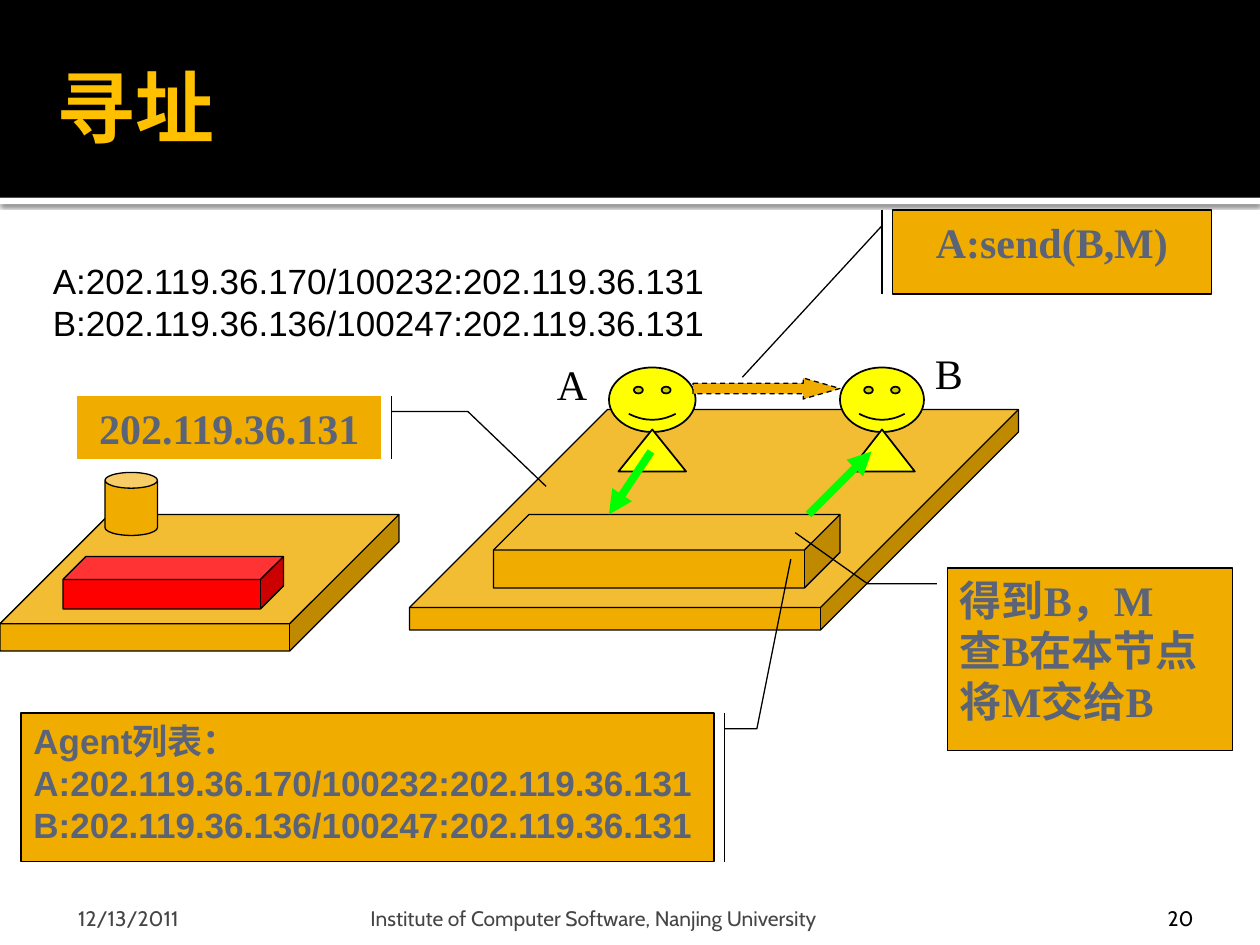
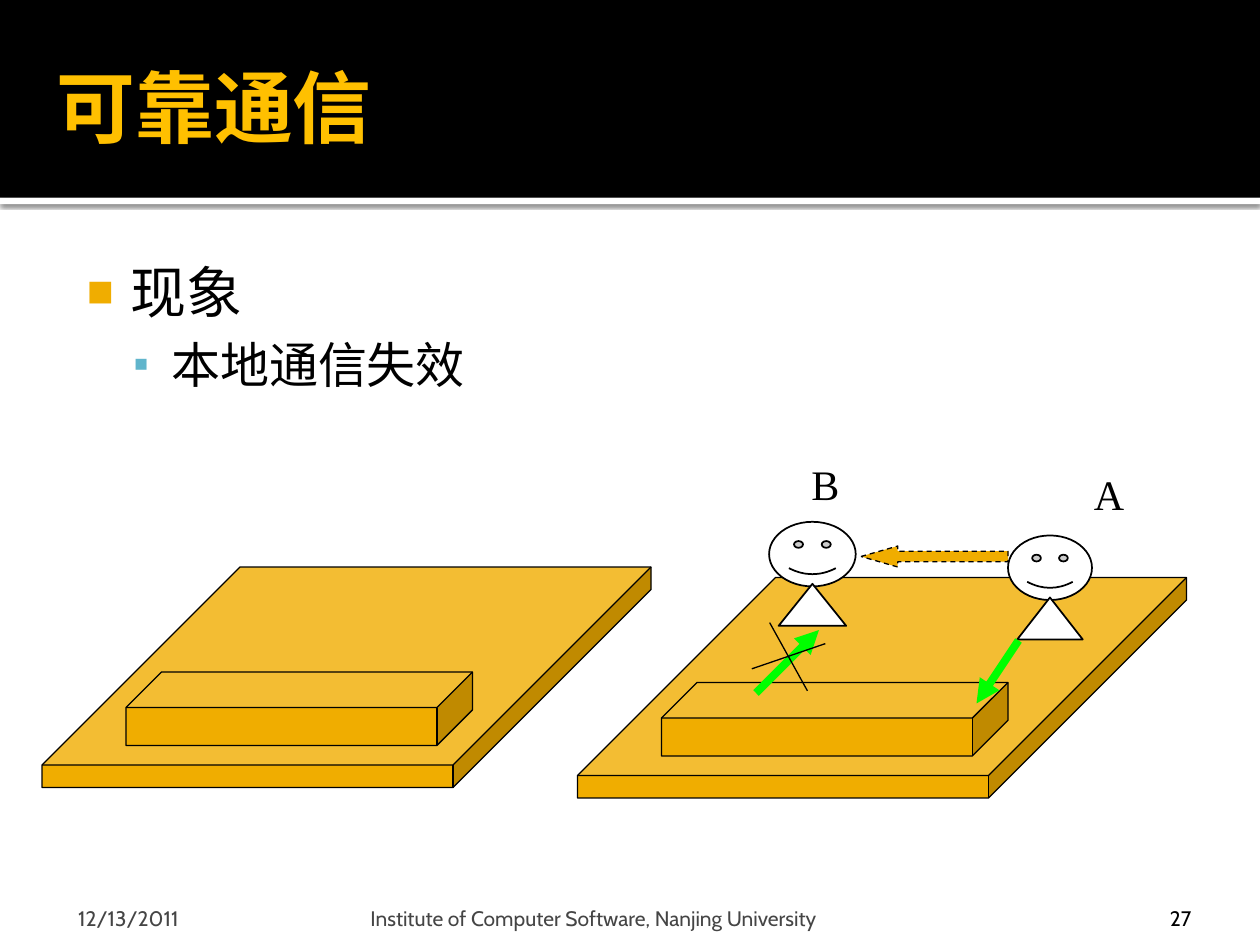
from dataclasses import dataclass
from typing import NamedTuple, Optional

from lxml import etree
from pptx import Presentation
from pptx import util as u
from pptx.dml.color import RGBColor
from pptx.enum import dml, shapes, text
from pptx.oxml import ns

COLUMNS, ROWS = 120, 90
SLIDE_WIDTH, SLIDE_HEIGHT = u.Inches(10), u.Inches(7.5)
SHAPE = shapes.MSO_SHAPE


def rgb(code: str) -> RGBColor:
    return RGBColor.from_string(code)


@dataclass(frozen=True)
class Theme:
    amber: RGBColor = rgb("F0AD00")
    gold: RGBColor = rgb("FFC000")
    black: RGBColor = rgb("000000")
    white: RGBColor = rgb("FFFFFF")
    red: RGBColor = rgb("FF0000")
    yellow: RGBColor = rgb("FFFF00")
    green: RGBColor = rgb("00FF00")
    slate: RGBColor = rgb("5A6378")
    gray: RGBColor = rgb("454545")
    teal: RGBColor = rgb("60B5CC")
    heading_font: str = "Cabin"
    address_font: str = "Arial"
    label_font: str = "Times New Roman"
    title_size: float = 45
    body_size: float = 32
    detail_size: float = 28
    label_size: float = 24
    address_size: float = 20
    footer_size: float = 12
    thin: float = 0.75
    outline: float = 1
    thick: float = 4.5


THEME = Theme()


class Box(NamedTuple):
    """Left, top, width and height in grid cells."""
    left: float
    top: float
    width: float
    height: float


class Point(NamedTuple):
    column: float
    row: float


class Insets(NamedTuple):
    left: float = 1.2
    top: float = 0.6
    right: float = 1.2
    bottom: float = 0.6


class Style(NamedTuple):
    font: str
    size: float
    color: RGBColor
    bold: bool = False


class Callout(NamedTuple):
    kind: SHAPE
    box: Box
    adjustments: tuple[float, ...]
    lines: tuple[str, ...]
    style: Style
    centered: bool = False


class Agent(NamedTuple):
    name: str
    head: Point
    width: float
    label: Box


class Footer(NamedTuple):
    box: Box
    insets: Insets
    color: RGBColor
    centered: bool = False


class Bullet(NamedTuple):
    words: str
    size: float
    mark: str
    color: RGBColor
    percent: int
    margin: float
    hanging: float
    space_before: float


TITLE = Style(THEME.heading_font, THEME.title_size, THEME.gold, True)
LABEL = Style(THEME.label_font, THEME.label_size, THEME.black)
ADDRESS = Style(THEME.address_font, THEME.address_size, THEME.black)
NOTE = LABEL._replace(color=THEME.slate, bold=True)
LISTING = ADDRESS._replace(color=THEME.slate, bold=True)

ADDRESSES = ("A:202.119.36.170/100232:202.119.36.131",
             "B:202.119.36.136/100247:202.119.36.131")
BAND = Box(0, 0, COLUMNS, 18.84)
STRIP = Box(0, BAND.height, COLUMNS, 0.6)
FOOTERS = (
    Footer(Box(6, 85, 28, 3.6), Insets(1.44, 0.6, 0.6, 0), THEME.gray),
    Footer(Box(34.68, 85, 72.24, 3.6), Insets(0.6, 0.6, 0.6, 0), THEME.gray),
    Footer(Box(107.64, 85, 9.6, 3.6), Insets(1.2, 0.6, 1.2, 0), THEME.black, True),
)
CALLOUTS = (
    Callout(SHAPE.LINE_CALLOUT_2_ACCENT_BAR, Box(7.33, 37.7, 29, 6),
            (0.25, 1.034, 0.25, 1.284, 1.438, 1.541), ("202.119.36.131",), NOTE, True),
    Callout(SHAPE.LINE_CALLOUT_2_BORDER_AND_ACCENT_BAR, Box(2, 67.9, 66, 14.16),
            (0.106, 1.015, 0.106, 1.062, -1.035, 1.111),
            ("Agent列表：", *ADDRESSES), LISTING),
    Callout(SHAPE.LINE_CALLOUT_1_BORDER_AND_ACCENT_BAR, Box(85, 20, 30.36, 8),
            (0.188, -0.033, 1.992, -0.471), ("A:send(B,M)",), NOTE, True),
    Callout(SHAPE.LINE_CALLOUT_2, Box(90.24, 54.1, 27.12, 17.4),
            (0.086, -0.037, 0.086, -0.281, -0.194, -0.535),
            ("得到B，M", "查B在本节点", "将M交给B"), NOTE),
)
BULLETS = (
    Bullet("现象", THEME.body_size, "■", THEME.amber, 80, 5.76, 4.2, 0),
    Bullet("本地通信失效", THEME.detail_size, "▪", THEME.teal, 90, 9.6, 3.6, 5.6),
)


def across(columns: float) -> u.Emu:
    return u.Emu(round(SLIDE_WIDTH * columns / COLUMNS))


def down(rows: float) -> u.Emu:
    return u.Emu(round(SLIDE_HEIGHT * rows / ROWS))


def place(box: Box) -> tuple[u.Emu, u.Emu, u.Emu, u.Emu]:
    return across(box.left), down(box.top), across(box.width), down(box.height)


def child(parent, tag: str, **attributes):
    element = etree.SubElement(parent, ns.qn(tag))
    for name, value in attributes.items():
        element.set(name, str(value))
    return element


def add_run(paragraph, words: str, style: Style) -> None:
    run = paragraph.add_run()
    run.text = words
    run.font.name, run.font.size = style.font, u.Pt(style.size)
    run.font.bold, run.font.color.rgb = style.bold, style.color


def write(frame, lines: tuple[str, ...], style: Style, centered: bool = False,
          anchor=text.MSO_ANCHOR.TOP, insets: Insets = Insets(), wrap: bool = True) -> None:
    frame.word_wrap = wrap
    frame.vertical_anchor = anchor
    frame.margin_left, frame.margin_right = across(insets.left), across(insets.right)
    frame.margin_top, frame.margin_bottom = down(insets.top), down(insets.bottom)
    for index, words in enumerate(lines):
        paragraph = frame.add_paragraph() if index else frame.paragraphs[0]
        paragraph.alignment = text.PP_ALIGN.CENTER if centered else text.PP_ALIGN.LEFT
        add_run(paragraph, words, style)


def add_label(slide, box: Box, lines: tuple[str, ...], style: Style) -> None:
    """Add text that keeps its lines and sizes its own box."""
    frame = slide.shapes.add_textbox(*place(box)).text_frame
    write(frame, lines, style, wrap=False)
    frame.auto_size = text.MSO_AUTO_SIZE.SHAPE_TO_FIT_TEXT


def add_solid(slide, kind: SHAPE, box: Box, fill: RGBColor,
              adjustments: tuple[float, ...] = (), line: Optional[float] = THEME.thin):
    shape = slide.shapes.add_shape(kind, *place(box))
    shape.shadow.inherit = False
    shape.fill.solid()
    shape.fill.fore_color.rgb = fill
    if line is None:
        shape.line.fill.background()
    else:
        shape.line.color.rgb, shape.line.width = THEME.black, u.Pt(line)
    for index, value in enumerate(adjustments):
        shape.adjustments[index] = value
    return shape


def add_line(slide, start: Point, end: Point, color: RGBColor = THEME.black,
             width: float = THEME.thin, arrow: bool = False) -> None:
    connector = slide.shapes.add_connector(
        shapes.MSO_CONNECTOR.STRAIGHT, across(start.column), down(start.row),
        across(end.column), down(end.row))
    connector.line.color.rgb, connector.line.width = color, u.Pt(width)
    if arrow:
        child(connector.line._get_or_add_ln(), "a:tailEnd", type="triangle")
    child(connector._element.spPr, "a:effectLst")


def add_transfer(slide, start: Point, end: Point) -> None:
    add_line(slide, start, end, THEME.green, THEME.thick, arrow=True)


def add_message(slide, kind: SHAPE, left: float, top: float) -> None:
    arrow = add_solid(slide, kind, Box(left, top, 14, 2), THEME.amber, (0.5, 1.75))
    arrow.line.dash_style = dml.MSO_LINE.DASH


def add_node(slide, corner: Point) -> None:
    """Add a host platform with its message queue."""
    left, top = corner
    add_solid(slide, SHAPE.CUBE, Box(left, top, 58, 21), THEME.amber, (0.898,))
    add_solid(slide, SHAPE.CUBE, Box(left + 8, top + 10, 33, 7), THEME.amber, (0.484,))


def add_agent(slide, agent: Agent, fill: RGBColor) -> None:
    (left, top), width = agent.head, agent.width
    head = Box(left, top, width, 6.15)
    body = Box(left + 0.11 * width, top + 5.9, 0.78 * width, 4)
    add_solid(slide, SHAPE.SMILEY_FACE, head, fill, (0.047,), THEME.outline)
    add_solid(slide, SHAPE.ISOSCELES_TRIANGLE, body, fill, (0.5,), THEME.outline)
    add_label(slide, agent.label, (agent.name,), LABEL)


def add_callout(slide, callout: Callout) -> None:
    shape = add_solid(slide, callout.kind, callout.box, THEME.amber, callout.adjustments)
    write(shape.text_frame, callout.lines, callout.style, callout.centered)


def add_bullets(slide, box: Box, bullets: tuple[Bullet, ...]) -> None:
    frame = slide.shapes.add_textbox(*place(box)).text_frame
    write(frame, (), LABEL, insets=Insets(0.72, 1.2, 1.2, 0.6))
    for level, bullet in enumerate(bullets):
        paragraph = frame.add_paragraph() if level else frame.paragraphs[0]
        paragraph.level, paragraph.space_before = level, u.Pt(bullet.space_before)
        properties = paragraph._p.get_or_add_pPr()
        properties.set("marL", str(across(bullet.margin)))
        properties.set("indent", str(-across(bullet.hanging)))
        child(child(properties, "a:buClr"), "a:srgbClr", val=bullet.color)
        child(properties, "a:buSzPct", val=bullet.percent * 1000)
        child(properties, "a:buFont", typeface=THEME.address_font)
        child(properties, "a:buChar", char=bullet.mark)
        add_run(paragraph, bullet.words, Style(THEME.heading_font, bullet.size, THEME.black))


def start_slide(presentation, title: str, number: int):
    """Add a slide with the title band and the footers."""
    slide = presentation.slides.add_slide(presentation.slide_layouts[6])
    strip = add_solid(slide, SHAPE.RECTANGLE, STRIP, THEME.white, line=None)
    shadow = child(strip._element.spPr.find(ns.qn("a:effectLst")), "a:outerShdw",
                   blurRad=u.Pt(2.5), dist=u.Pt(0.8), dir=90 * 60000, rotWithShape=0)
    child(child(shadow, "a:srgbClr", val=THEME.black), "a:alpha", val=60000)
    add_solid(slide, SHAPE.RECTANGLE, BAND, THEME.black, line=None)
    heading = slide.shapes.add_textbox(*place(Box(4.2, 0.72, 113.4, 18.84)))
    write(heading.text_frame, (title,), TITLE, anchor=text.MSO_ANCHOR.MIDDLE,
          insets=Insets(right=0.6))
    wording = ("12/13/2011", "Institute of Computer Software, Nanjing University", str(number))
    for footer, words in zip(FOOTERS, wording):
        frame = slide.shapes.add_textbox(*place(footer.box)).text_frame
        style = Style(THEME.heading_font, THEME.footer_size, footer.color)
        write(frame, (words,), style, footer.centered, text.MSO_ANCHOR.BOTTOM, footer.insets)
    return slide


def build_addressing(presentation) -> None:
    slide = start_slide(presentation, "寻址", 20)
    add_solid(slide, SHAPE.CUBE, Box(0, 49, 38, 13), THEME.amber, (0.8,))
    add_solid(slide, SHAPE.CUBE, Box(6, 53, 21, 5), THEME.red, (0.438,))
    add_solid(slide, SHAPE.CAN, Box(10, 45, 5, 6), THEME.amber, (0.3,))
    add_node(slide, Point(39, 39))
    add_agent(slide, Agent("A", Point(58, 35), 8.25, Box(51.85, 33.6, 5.3, 6)), THEME.yellow)
    add_agent(slide, Agent("B", Point(80, 35), 8, Box(87.85, 32.5, 5, 6)), THEME.yellow)
    add_label(slide, Box(3.85, 24.15, 64.8, 9.24), ADDRESSES, ADDRESS)
    add_message(slide, SHAPE.RIGHT_ARROW, 66, 36)
    for callout in CALLOUTS:
        add_callout(slide, callout)
    add_transfer(slide, Point(62, 43), Point(58, 49))
    add_transfer(slide, Point(77, 49), Point(83, 43))


def build_reliable_communication(presentation) -> None:
    slide = start_slide(presentation, "可靠通信", 27)
    add_bullets(slide, Box(6, 23.3, 108, 60.7), BULLETS)
    add_node(slide, Point(55, 55))
    add_node(slide, Point(4, 54))
    add_agent(slide, Agent("A", Point(96, 51), 8, Box(103, 44, 5.3, 6)), THEME.white)
    add_agent(slide, Agent("B", Point(73.25, 49.7), 8.25, Box(76.1, 43.1, 5, 6)), THEME.white)
    add_message(slide, SHAPE.LEFT_ARROW, 82, 52)
    add_transfer(slide, Point(97, 61), Point(93, 67))
    add_transfer(slide, Point(72, 66), Point(78, 60))
    add_line(slide, Point(73.3, 59.3), Point(76.9, 65.8))
    add_line(slide, Point(78.6, 61.3), Point(71.6, 63.7))


def main() -> None:
    presentation = Presentation()
    presentation.slide_width, presentation.slide_height = SLIDE_WIDTH, SLIDE_HEIGHT
    build_addressing(presentation)
    build_reliable_communication(presentation)
    presentation.save("out.pptx")


if __name__ == "__main__":
    main()
